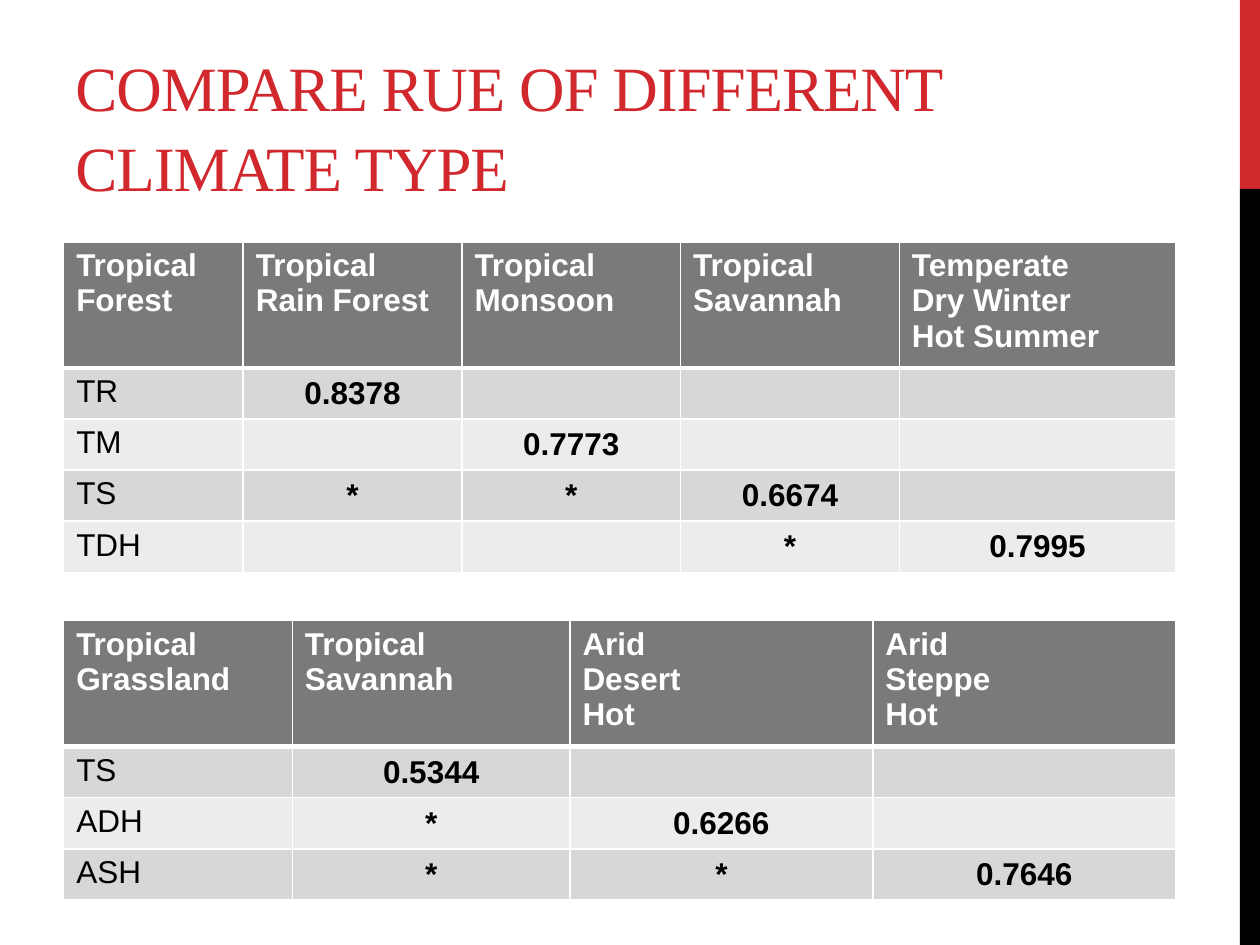
from dataclasses import dataclass

from lxml.etree import SubElement
from pptx import Presentation
from pptx.dml.color import RGBColor
from pptx.enum.shapes import MSO_SHAPE
from pptx.enum.text import MSO_ANCHOR, PP_ALIGN
from pptx.oxml.ns import qn
from pptx.util import Pt


@dataclass(frozen=True)
class Theme:
    red: str = "D1282E"
    black: str = "000000"
    white: str = "FFFFFF"
    header_fill: str = "7A7A7A"
    band_fills: tuple = ("D7D7D7", "ECECEC")
    title_font: str = "Times New Roman"
    table_font: str = "Arial"
    title_size: float = 36
    table_size: float = 18
    thin_border: float = 1
    thick_border: float = 3


THEME = Theme()
TABLE_LEFT = 36.4
HEADER_HEIGHT = 67.4
ROW_HEIGHT = 29.2

FOREST = {
    "top": 138.2,
    "widths": (102.6, 125, 125, 125, 157.9),
    "rows": (
        ("Tropical Forest", "Tropical\nRain Forest", "Tropical\nMonsoon",
         "Tropical\nSavannah", "Temperate\nDry Winter\nHot Summer"),
        ("TR", "0.8378", "", "", ""),
        ("TM", "", "0.7773", "", ""),
        ("TS", "*", "*", "0.6674", ""),
        ("TDH", "", "", "*", "0.7995"),
    ),
}
GRASSLAND = {
    "top": 354.6,
    "widths": (130.7, 158.6, 173.1, 173.1),
    "rows": (
        ("Tropical Grassland", "Tropical\nSavannah", "Arid\nDesert\nHot",
         "Arid\nSteppe\nHot"),
        ("TS", "0.5344", "", ""),
        ("ADH", "*", "0.6266", ""),
        ("ASH", "*", "*", "0.7646"),
    ),
}


def set_attributes(target, values):
    for name, value in values.items():
        setattr(target, name, value)


def format_font(font, name, size, color, bold=False):
    set_attributes(font, {"name": name, "size": Pt(size), "bold": bold})
    font.color.rgb = RGBColor.from_string(color)


def add_bar(slide, top, height, color):
    shape = slide.shapes.add_shape(
        MSO_SHAPE.RECTANGLE, Pt(708.5), Pt(top), Pt(11.5), Pt(height))
    shape.shadow.inherit = False
    shape.fill.solid()
    shape.fill.fore_color.rgb = RGBColor.from_string(color)
    shape.line.fill.background()


def add_title(slide, text):
    shape = slide.shapes.add_textbox(Pt(36), Pt(12), Pt(608), Pt(108))
    set_attributes(shape.text_frame, {
        "word_wrap": True, "vertical_anchor": MSO_ANCHOR.BOTTOM})
    paragraph = shape.text_frame.paragraphs[0]
    paragraph.line_spacing = 1.05
    run = paragraph.add_run()
    run.text = text
    format_font(run.font, THEME.title_font, THEME.title_size, THEME.red)
    run.font._element.set("spc", "-60")


def add_borders(cell, row_index):
    thick_side = {0: "lnB", 1: "lnT"}.get(row_index)
    properties = cell._tc.get_or_add_tcPr()
    for side in ("lnL", "lnR", "lnT", "lnB"):
        width = THEME.thick_border if side == thick_side else THEME.thin_border
        line = SubElement(properties, qn(f"a:{side}"), w=str(Pt(width)))
        fill = SubElement(line, qn("a:solidFill"))
        SubElement(fill, qn("a:srgbClr"), val=THEME.white)


def fill_cell(cell, text, row_index, column_index):
    is_header = row_index == 0
    is_value = not is_header and column_index > 0
    add_borders(cell, row_index)
    cell.fill.solid()
    color = THEME.header_fill if is_header else THEME.band_fills[(row_index - 1) % 2]
    cell.fill.fore_color.rgb = RGBColor.from_string(color)
    cell.vertical_anchor = MSO_ANCHOR.MIDDLE if is_value else MSO_ANCHOR.TOP
    cell.text = text
    for paragraph in cell.text_frame.paragraphs:
        paragraph.alignment = PP_ALIGN.CENTER if is_value else PP_ALIGN.LEFT
        for run in paragraph.runs:
            format_font(run.font, THEME.table_font, THEME.table_size,
                        THEME.white if is_header else THEME.black,
                        bold=is_header or is_value)


def add_climate_table(slide, top, widths, rows):
    height = HEADER_HEIGHT + ROW_HEIGHT * (len(rows) - 1)
    table = slide.shapes.add_table(
        len(rows), len(widths), Pt(TABLE_LEFT), Pt(top),
        Pt(sum(widths)), Pt(height)).table
    for column, width in zip(table.columns, widths):
        column.width = Pt(width)
    for row_index, texts in enumerate(rows):
        table.rows[row_index].height = Pt(ROW_HEIGHT if row_index else HEADER_HEIGHT)
        for column_index, text in enumerate(texts):
            fill_cell(table.cell(row_index, column_index), text,
                      row_index, column_index)


def main():
    presentation = Presentation()
    set_attributes(presentation, {"slide_width": Pt(720), "slide_height": Pt(540)})
    slide = presentation.slides.add_slide(presentation.slide_layouts[6])
    add_bar(slide, 0, 108, THEME.red)
    add_bar(slide, 108, 432, THEME.black)
    add_title(slide, "COMPARE RUE OF DIFFERENT CLIMATE TYPE")
    for climate_table in (FOREST, GRASSLAND):
        add_climate_table(slide, **climate_table)
    presentation.save("out.pptx")


if __name__ == "__main__":
    main()
